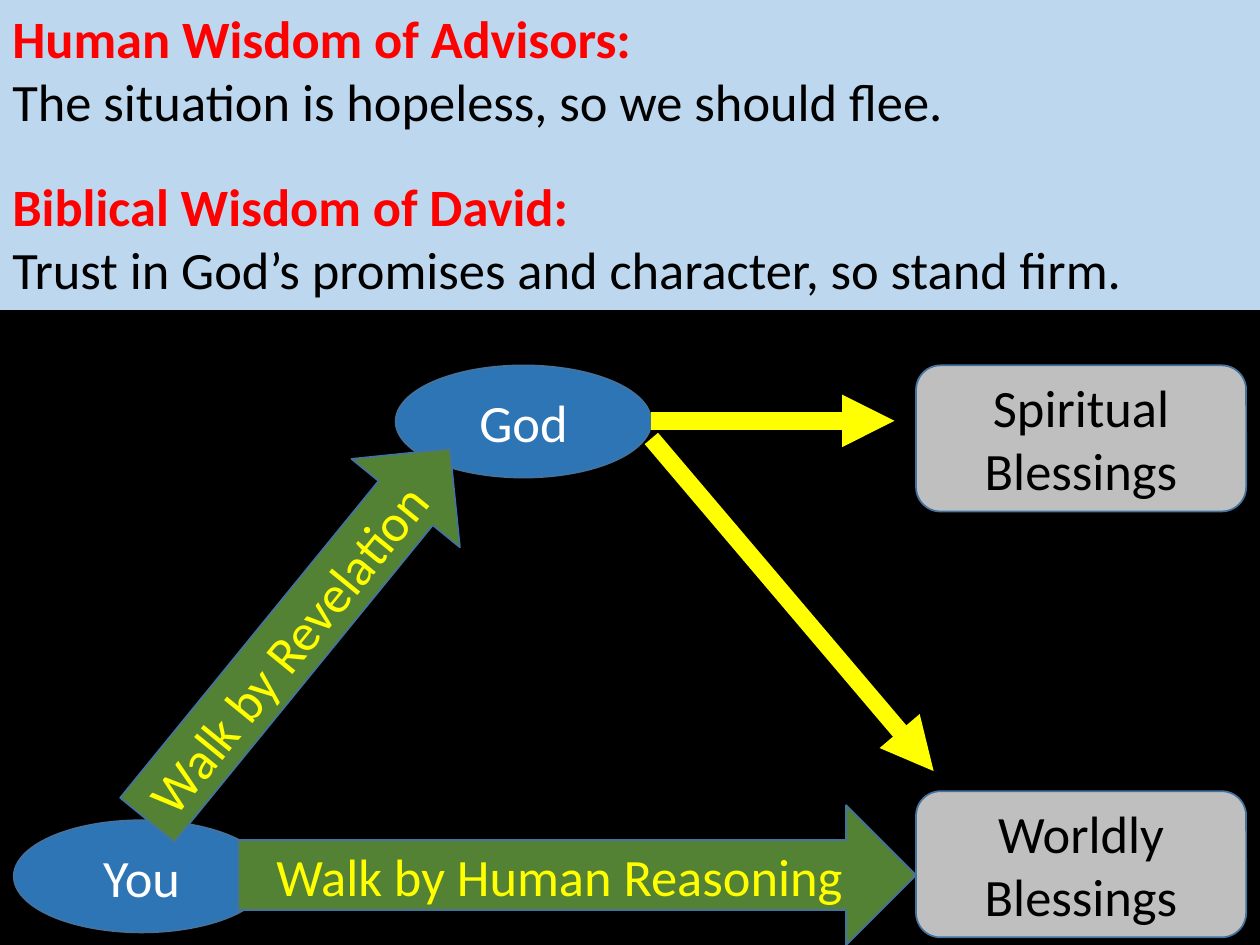
from pptx import Presentation
from pptx.dml.color import RGBColor
from pptx.enum.shapes import MSO_CONNECTOR, MSO_SHAPE
from pptx.enum.text import MSO_ANCHOR, PP_ALIGN
from pptx.oxml.ns import qn
from pptx.util import Inches, Pt
from lxml import etree

OVAL, ROUND, ARROW = MSO_SHAPE.OVAL, MSO_SHAPE.ROUNDED_RECTANGLE, MSO_SHAPE.RIGHT_ARROW
LINE, MIDDLE, CENTER = MSO_CONNECTOR.STRAIGHT, MSO_ANCHOR.MIDDLE, PP_ALIGN.CENTER

COLORS = {
    "back": "000000", "panel": "BDD7EE", "head": "FF0000", "dark": "000000",
    "blue": "2E75B6", "edge": "43739E", "white": "FFFFFF",
    "green": "548235", "yellow": "FFFF00", "gray": "BFBFBF",
}


def color(name):
    return RGBColor.from_string(COLORS[name])


class Deck:
    font, size = "Calibri", Pt(30)

    def __init__(self, wide, high):
        self.file = Presentation()
        self.file.slide_width, self.file.slide_height = Inches(wide), Inches(high)
        self.slide = self.file.slides.add_slide(self.file.slide_layouts[6])
        fill = self.slide.background.fill
        fill.solid()
        fill.fore_color.rgb = color("back")

    def style(self, para, ink, bold=False):
        para.font.name, para.font.size = self.font, self.size
        para.font.bold = bold
        para.font.color.rgb = color(ink)

    def panel(self, box, parts, gap):
        """Filled text box of headings, each followed by its statement."""
        shape = self.slide.shapes.add_textbox(*map(Inches, box))
        shape.fill.solid()
        shape.fill.fore_color.rgb = color("panel")
        frame = shape.text_frame
        frame.word_wrap = True
        frame.text = "\n".join(line for part in parts for line in part)
        for i, para in enumerate(frame.paragraphs):
            head = i % 2 == 0
            self.style(para, "head" if head else "dark", head)
            if head and i:
                para.space_before = Pt(gap)

    def shape(self, kind, box, text, fill, ink, turn=0):
        shape = self.slide.shapes.add_shape(kind, *map(Inches, box))
        shape.shadow.inherit = False
        shape.rotation = turn
        shape.fill.solid()
        shape.fill.fore_color.rgb = color(fill)
        shape.line.color.rgb = color("edge")
        shape.line.width = Pt(1)
        frame = shape.text_frame
        frame.word_wrap = True
        frame.vertical_anchor = MIDDLE
        frame.text = text
        for para in frame.paragraphs:
            para.alignment = CENTER
            self.style(para, ink)

    def line(self, start, end):
        line = self.slide.shapes.add_connector(LINE, *map(Inches, start + end))
        line.line.color.rgb = color("yellow")
        line.line.width = Pt(10)
        etree.SubElement(line.line._get_or_add_ln(), qn("a:tailEnd"), type="triangle")
        etree.SubElement(line._element.spPr, qn("a:effectLst"))


def main():
    deck = Deck(10, 7.5)

    # Two kinds of wisdom
    deck.panel((0, 0, 10, 2.46), [
        ("Human Wisdom of Advisors:", "The situation is hopeless, so we should flee."),
        ("Biblical Wisdom of David:",
         "Trust in God’s promises and character, so stand firm."),
    ], 24)

    # People
    for text, left, top in (("You", 0.11, 6.51), ("God", 3.14, 2.9)):
        deck.shape(OVAL, (left, top, 2.03, 0.89), text, "blue", "white")

    # Walks
    for text, box, turn in (
        ("Walk by Revelation", (0.47, 4.48, 3.8, 1.11), 309.2),
        ("Walk by Human Reasoning", (1.89, 6.39, 5.38, 1.11), 0),
    ):
        deck.shape(ARROW, box, text, "green", "yellow", turn)

    # Blessings
    for text, top in (("Spiritual", 2.9), ("Worldly", 6.28)):
        deck.shape(ROUND, (7.27, top, 2.62, 1.16), text + "\nBlessings", "gray", "dark")

    # From God to the blessings
    deck.line((5.17, 3.34), (7.1, 3.34))
    deck.line((5.17, 3.48), (7.41, 6.12))

    deck.file.save("out.pptx")


if __name__ == "__main__":
    main()
